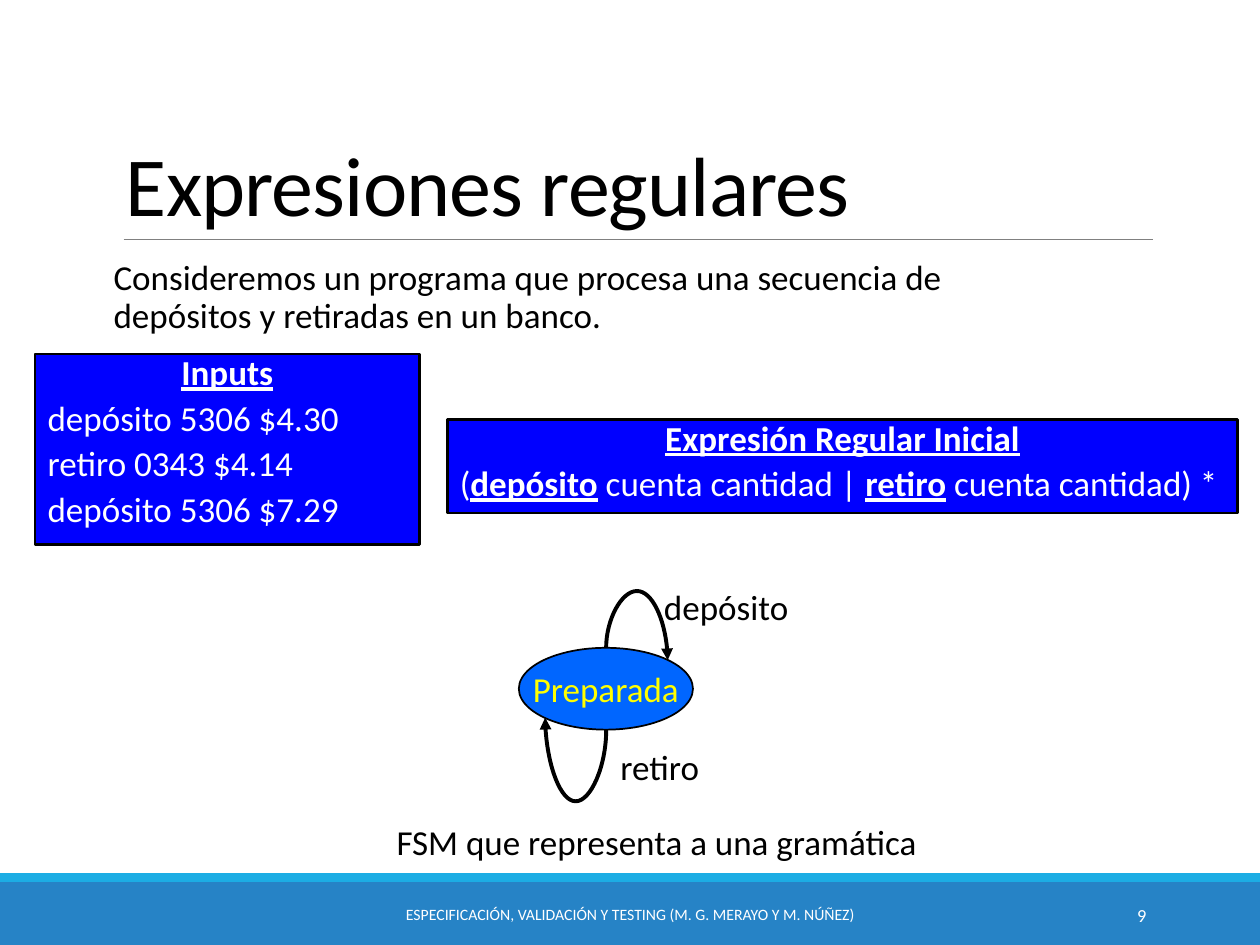
from lxml import etree
from pptx import Presentation
from pptx import util as u
from pptx.dml import color
from pptx.enum import shapes, text
from pptx.oxml import ns

ALIGN = {"l": text.PP_ALIGN.LEFT, "c": text.PP_ALIGN.CENTER, "r": text.PP_ALIGN.RIGHT}
ANCHOR = {"t": text.MSO_ANCHOR.TOP, "m": text.MSO_ANCHOR.MIDDLE, "b": text.MSO_ANCHOR.BOTTOM}
BLACK, WHITE, BLUE = "000000", "FFFFFF", "0000FF"


def rgb(hex_value):
    return color.RGBColor.from_string(hex_value)


class SlideBuilder:
    """Holds the text style and the current slide, and adds its elements."""

    font = "Calibri"
    size = 20

    def __init__(self, slide):
        self.shapes = slide.shapes

    def start_group(self):
        self.shapes = self.shapes.add_group_shape().shapes

    def fill_text(self, shape, paragraphs, ink=BLACK, size=None, align="l", anchor="t",
                  wrap=True, grow=False, line=None, before=0, tracking=None, inset=0.25):
        frame = shape.text_frame
        frame.word_wrap = wrap
        frame.vertical_anchor = ANCHOR[anchor]
        frame.margin_left = frame.margin_right = u.Cm(inset)
        frame.auto_size = (text.MSO_AUTO_SIZE.SHAPE_TO_FIT_TEXT if grow
                           else text.MSO_AUTO_SIZE.NONE)
        for index, runs in enumerate(paragraphs):
            paragraph = frame.add_paragraph() if index else frame.paragraphs[0]
            paragraph.alignment = ALIGN[align if index == 0 else "l"]
            paragraph.space_before = u.Pt(before)
            if line:
                paragraph.line_spacing = line
            for words, strong in runs:
                run = paragraph.add_run()
                run.text = words
                run.font.name = self.font
                run.font.size = u.Pt(size or self.size)
                run.font.bold = run.font.underline = strong
                run.font.color.rgb = rgb(ink)
                if tracking:
                    run._r.get_or_add_rPr().set("spc", str(tracking))

    def label(self, x, y, w, h, words, **style):
        box = self.shapes.add_textbox(u.Cm(x), u.Cm(y), u.Cm(w), u.Cm(h))
        self.fill_text(box, [[(words, False)]], **style)

    def block(self, x, y, w, h, fill, border=None, kind=shapes.MSO_SHAPE.RECTANGLE):
        block = self.shapes.add_shape(kind, u.Cm(x), u.Cm(y), u.Cm(w), u.Cm(h))
        block.shadow.inherit = False
        block.fill.solid()
        block.fill.fore_color.rgb = rgb(fill)
        if border:
            block.line.color.rgb = rgb(BLACK)
            block.line.width = u.Pt(border)
        else:
            block.line.fill.background()
        return block

    def panel(self, x, y, w, h, heading, *lines):
        panel = self.block(x, y, w, h, BLUE, 1.5)
        self.fill_text(panel, [[(heading, True)], *lines], ink=WHITE, align="c",
                       grow=True, line=0.75, before=8)

    def connector(self, kind, start, end, ink, width):
        link = self.shapes.add_connector(kind, *(u.Cm(v) for v in (*start, *end)))
        link.line.color.rgb = rgb(ink)
        link.line.width = u.Pt(width)
        etree.SubElement(link._element.spPr, ns.qn("a:effectLst"))
        return link

    def loop(self, start, end, turn, bend):
        mid_x, mid_y = (start[0] + end[0]) / 2, (start[1] + end[1]) / 2
        half_w, half_h = abs(end[1] - start[1]) / 2, abs(end[0] - start[0]) / 2
        link = self.connector(shapes.MSO_CONNECTOR.CURVE, (mid_x - half_w, mid_y + half_h),
                              (mid_x + half_w, mid_y - half_h), BLACK, 2.25)
        properties = link._element.spPr
        properties.find(ns.qn("a:xfrm")).set("rot", str(turn * 60000))
        adjustments = properties.find(ns.qn("a:prstGeom")).get_or_add_avLst()
        etree.SubElement(adjustments, ns.qn("a:gd"), name="adj1", fmla=f"val {bend * 1000}")
        etree.SubElement(properties.find(ns.qn("a:ln")), ns.qn("a:tailEnd"), type="triangle")


def main():
    deck = Presentation()
    deck.slide_width, deck.slide_height = u.Cm(25.4), u.Cm(19.05)
    page = SlideBuilder(deck.slides.add_slide(deck.slide_layouts[6]))

    page.block(0, 17.78, 25.4, 1.27, "2683C6")
    page.block(0, 17.6, 25.4, 0.18, "1CADE4")
    page.connector(shapes.MSO_CONNECTOR.STRAIGHT, (2.49, 4.83), (23.24, 4.83), "808080", 0.5)
    page.label(2.29, 0.79, 21.08, 4.04, "Expresiones regulares",
               size=48, anchor="b", line=0.85, tracking=-50)
    page.label(2.29, 5.13, 19.61, 12.4, "Consideremos un programa que procesa una secuencia "
               "de depósitos y retiradas en un banco.", line=0.9, before=12, inset=0)
    page.label(7.67, 17.93, 10.06, 1.02,
               "ESPECIFICACIÓN, VALIDACIÓN Y TESTING (M. G. MERAYO Y M. NÚÑEZ)",
               ink=WHITE, size=9, align="c", anchor="m")
    page.label(20.62, 17.93, 2.74, 1.02, "9", ink=WHITE, size=10.5, align="r", anchor="m")

    inputs = ("depósito 5306 $4.30", "retiro 0343 $4.14", "depósito 5306 $7.29")
    page.panel(0.71, 7.14, 7.75, 3.84, "Inputs", *([(entry, False)] for entry in inputs))
    page.panel(9.02, 8.46, 15.93, 1.88, "Expresión Regular Inicial",
               [("(", False), ("depósito", True), (" cuenta cantidad | ", False),
                ("retiro", True), (" cuenta cantidad) *", False)])

    page.start_group()
    state = page.block(10.46, 13.06, 3.51, 1.65, "0066FF", 1, shapes.MSO_SHAPE.OVAL)
    page.fill_text(state, [[("Preparada", False)]], ink="FFFF00", align="c", anchor="m",
                   wrap=False)
    page.loop((12.22, 13.06), (13.46, 13.31), 90, -458)
    page.loop((12.22, 14.72), (10.99, 14.47), 270, -574)
    for x, y, w, words in ((13, 11.68, 3.28, "depósito"), (11.94, 14.91, 2.72, "retiro"),
                           (7.59, 16.41, 11.3, "FSM que representa a una gramática")):
        page.label(x, y, w, 1.12, words, align="c", grow=True, before=10)

    deck.save("out.pptx")


if __name__ == "__main__":
    main()
